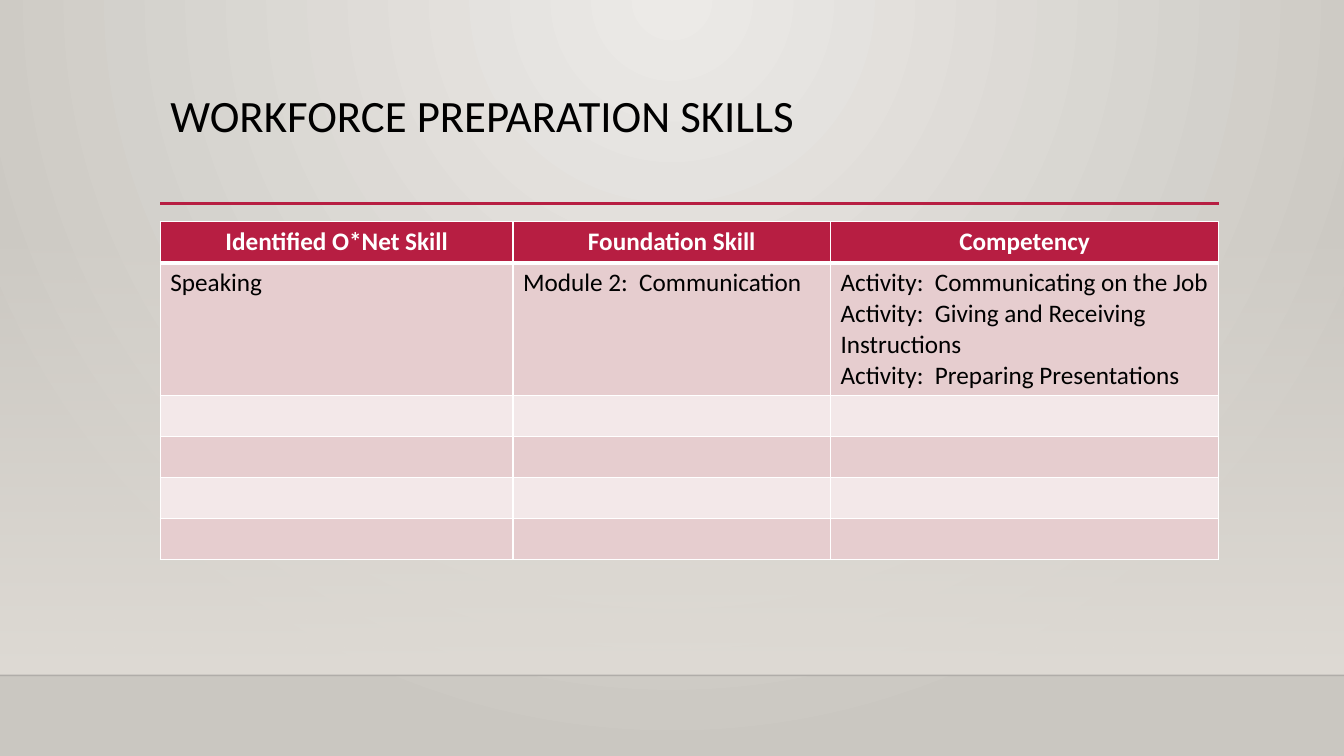
"""Build the workforce preparation skills slide."""
import lxml.etree
import pptx
import pptx.dml.color
import pptx.enum.shapes
import pptx.enum.text
import pptx.oxml.ns
import pptx.util

Cm, Pt = pptx.util.Cm, pptx.util.Pt
RGBColor = pptx.dml.color.RGBColor
ALIGN = pptx.enum.text.PP_ALIGN
ANCHOR = pptx.enum.text.MSO_ANCHOR
SHAPE = pptx.enum.shapes.MSO_SHAPE
STRAIGHT = pptx.enum.shapes.MSO_CONNECTOR.STRAIGHT

RED = RGBColor(0xB7, 0x1E, 0x42)
ROSE = RGBColor(0xE6, 0xCD, 0xCF)
PALE = RGBColor(0xF3, 0xE8, 0xE9)
WHITE = RGBColor(0xFF, 0xFF, 0xFF)
BLACK = RGBColor(0, 0, 0)
INK = RGBColor(0, 0, 1)
LIGHT = RGBColor(0xEC, 0xEA, 0xE7)
DARK = RGBColor(0xCA, 0xC7, 0xC1)
SAND = RGBColor(0xDF, 0xDB, 0xD5)


def add(parent, tag, **attrs):
    return lxml.etree.SubElement(parent, pptx.oxml.ns.qn(tag), **attrs)


def write(frame, text, size=18, color=BLACK, bold=False, align=ALIGN.LEFT, space=1.0):
    frame.text = text
    for para in frame.paragraphs:
        para.alignment = align
        para.line_spacing = space
        for run in para.runs:
            font = run.font
            font.name, font.size, font.bold = "Calibri", Pt(size), bold
            font.color.rgb = color


deck = pptx.Presentation()
deck.slide_width, deck.slide_height = Cm(33.87), Cm(19.05)
slide = deck.slides.add_slide(deck.slide_layouts[5])
shapes = slide.shapes

back = slide.background.fill
back.gradient()
for stop, color in zip(back.gradient_stops, (LIGHT, DARK)):
    stop.color.rgb = color
grad = slide._element.find(".//" + pptx.oxml.ns.qn("a:gradFill"))
grad.remove(grad.find(pptx.oxml.ns.qn("a:lin")))
circle = add(grad, "a:path", path="circle")
add(circle, "a:fillToRect", l="43000", t="0", r="43000", b="100000")

wall = shapes.add_shape(SHAPE.RECTANGLE, 0, Cm(5.61), Cm(33.87), Cm(11.41))
wall.shadow.inherit = False
wall.line.fill.background()
wall.fill.gradient()
wall.fill.gradient_angle = 270
for stop in wall.fill.gradient_stops:
    stop.color.rgb = SAND
clear = wall._element.find(".//" + pptx.oxml.ns.qn("a:srgbClr"))
add(clear, "a:alpha", val="0")

for left, right, top, color, width, alpha in (
    (0, 33.87, 17.02, INK, 1, 20),
    (4.04, 30.73, 5.13, RED, 2.5, 100),
):
    rule = shapes.add_connector(STRAIGHT, Cm(left), Cm(top), Cm(right), Cm(top))
    rule.line.width = Pt(width)
    rule.line.color.rgb = color
    tint = rule._element.find(".//" + pptx.oxml.ns.qn("a:srgbClr"))
    add(tint, "a:alpha", val=str(alpha * 1000))
    add(rule._element.spPr, "a:effectLst")

title = shapes.title
title.left, title.top, title.width, title.height = Cm(4.04), Cm(2.24), Cm(26.67), Cm(2.92)
title.text_frame.vertical_anchor = ANCHOR.TOP
write(title.text_frame, "WORKFORCE PREPARATION SKILLS", size=32, space=0.9)

rows = [
    ("Identified O*Net Skill", "Foundation Skill", "Competency"),
    (
        "Speaking",
        "Module 2:  Communication",
        "Activity:  Communicating on the Job\n"
        "Activity:  Giving and Receiving Instructions\n"
        "Activity:  Preparing Presentations",
    ),
] + [("", "", "")] * 4
widths = (8.89, 8, 9.78)
high = 1.03
table = shapes.add_table(
    len(rows), len(widths), Cm(4.04), Cm(5.59), Cm(sum(widths)), Cm(high * len(rows))
).table
for column, width in zip(table.columns, widths):
    column.width = Cm(width)

for r, row in enumerate(rows):
    table.rows[r].height = Cm(high)
    head = r == 0
    for c, text in enumerate(row):
        cell = table.cell(r, c)
        props = cell._tc.get_or_add_tcPr()
        for side in "LRTB":
            thick = head and side == "B" or r == 1 and side == "T"
            edge = add(props, "a:ln" + side, w=str(Pt(3 if thick else 1)))
            add(add(edge, "a:solidFill"), "a:srgbClr", val=str(WHITE))
        cell.fill.solid()
        cell.fill.fore_color.rgb = RED if head else ROSE if r % 2 else PALE
        write(
            cell.text_frame,
            text,
            color=WHITE if head else BLACK,
            bold=head,
            align=ALIGN.CENTER if head else ALIGN.LEFT,
        )

deck.save("out.pptx")
